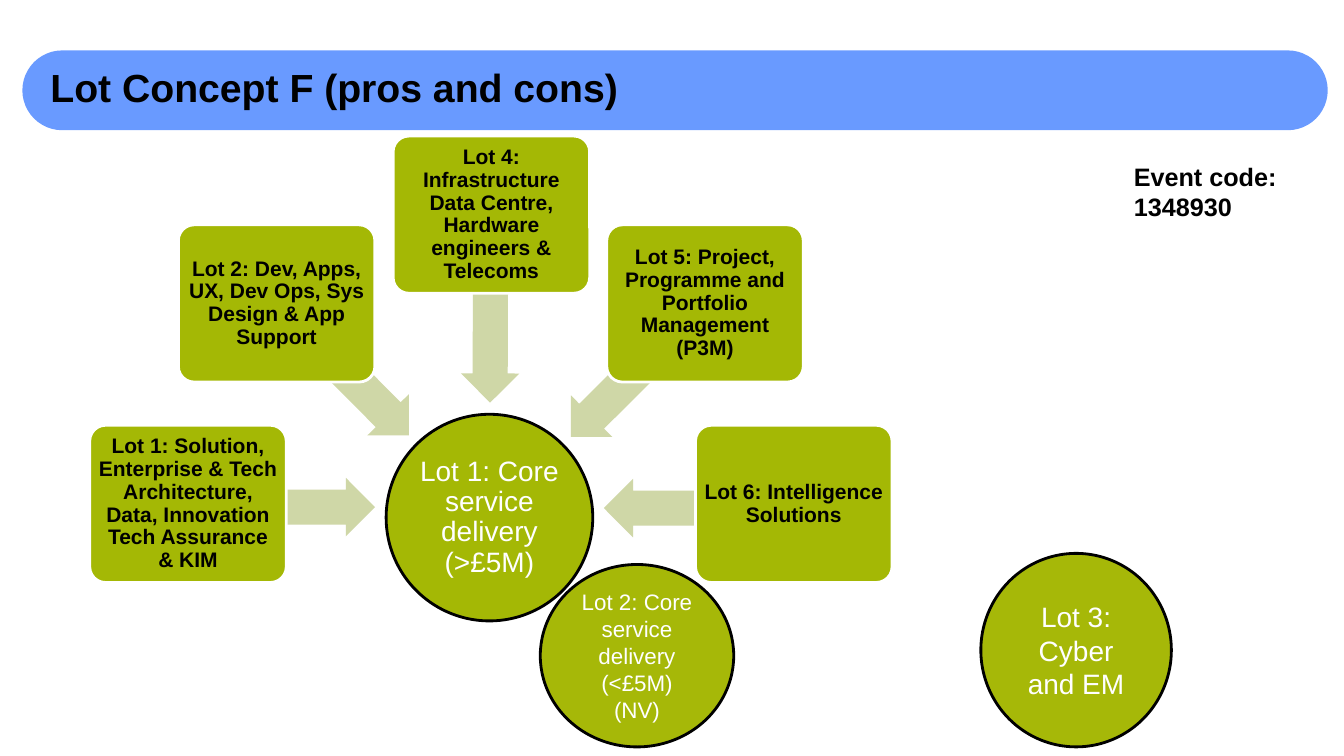
from pptx import Presentation
from pptx.dml.color import RGBColor
from pptx.enum.shapes import MSO_SHAPE as SHAPE
from pptx.enum.text import MSO_ANCHOR as ANCHOR, MSO_AUTO_SIZE as AUTO, PP_ALIGN as ALIGN
from pptx.util import Pt

BLUE = RGBColor(0x69, 0x9A, 0xFF)
GREEN = RGBColor(0xA4, 0xB8, 0x05)
DISC_GREEN = RGBColor(0xA6, 0xB8, 0x08)
PALE_GREEN = RGBColor(0xCF, 0xD7, 0xA7)
BLACK = RGBColor(0, 0, 0)
WHITE = RGBColor(0xFF, 0xFF, 0xFF)


def add_shape(kind, x, y, w, h, fill, line=None):
    sp = s.shapes.add_shape(kind, Pt(x), Pt(y), Pt(w), Pt(h))
    sp.shadow.inherit = False
    sp.fill.solid()
    sp.fill.fore_color.rgb = fill
    if line is None:
        sp.line.fill.background()
    else:
        sp.line.color.rgb = line
        sp.line.width = Pt(2)
    return sp


def write(sp, text, size, color, bold=False, align=ALIGN.CENTER,
          anchor=ANCHOR.MIDDLE, inset=(7.2, 3.6), spacing=None):
    """Fill a shape with text; inset is (horizontal, vertical) in points."""
    tf = sp.text_frame
    tf.text = text
    tf.word_wrap = True
    tf.auto_size = AUTO.NONE
    tf.vertical_anchor = anchor
    tf.margin_left = tf.margin_right = Pt(inset[0])
    tf.margin_top = tf.margin_bottom = Pt(inset[1])
    for p in tf.paragraphs:
        p.alignment = align
        p.line_spacing = spacing
        p.font.name = "Arial"
        p.font.size = Pt(size)
        p.font.bold = bold
        p.font.color.rgb = color


prs = Presentation()
prs.slide_width, prs.slide_height = Pt(960), Pt(540)
s = prs.slides.add_slide(prs.slide_layouts[5])

# Title on its blue bar
title = s.shapes.title
title.left, title.top, title.width, title.height = Pt(36), Pt(45.4), Pt(754.6), Pt(41.8)
write(title, "Lot Concept F (pros and cons)", 28, BLACK, True,
      ALIGN.LEFT, ANCHOR.TOP, (0, 0))
bar = add_shape(SHAPE.ROUNDED_RECTANGLE, 16, 36, 932.4, 57, BLUE)
bar.adjustments[0] = 0.5
title._element.addprevious(bar._element)

# Core delivery circles
small_core = add_shape(SHAPE.OVAL, 385.9, 403.2, 138.2, 130.3, DISC_GREEN, BLACK)
write(small_core, "Lot 2: Core service delivery (<£5M)\n(NV)", 16, WHITE)
core = add_shape(SHAPE.OVAL, 275.8, 295.9, 147.6, 147.6, GREEN, BLACK)
write(core, "Lot 1: Core service delivery (>£5M)", 20, WHITE, inset=(0.7, 0.7), spacing=0.9)

# Lots feeding the core: text, box corner, arrow corner, arrow length, arrow rotation
lots = [
    ("Lot 1: Solution, Enterprise & Tech Architecture, Data, Innovation Tech Assurance & KIM",
     (64.1, 303.8), (133.9, 341.3), 134, 180),
    ("Lot 2: Dev, Apps, UX, Dev Ops, Sys Design & App Support",
     (127.4, 160.6), (177.8, 242.6), 134, 225.2),
    ("Lot 4: Infrastructure Data Centre, Hardware engineers & Telecoms",
     (280.8, 97.2), (283, 199.4), 134.6, 270.2),
    ("Lot 5: Project, Programme and Portfolio Management (P3M)",
     (433.4, 160.6), (388.1, 243.4), 135.4, 315.2),
    ("Lot 6: Intelligence Solutions",
     (496.8, 303.8), (431.3, 342), 136.1, 0),
]
for text, box_at, arrow_at, length, rotation in lots:
    arrow = add_shape(SHAPE.LEFT_ARROW, *arrow_at, length, 41.8, PALE_GREEN)
    arrow.adjustments[0] = 0.6
    arrow.rotation = rotation
    box = add_shape(SHAPE.ROUNDED_RECTANGLE, *box_at, 140.4, 112.3, GREEN, WHITE)
    box.adjustments[0] = 0.1
    write(box, text, 15, BLACK, True, inset=(2.6, 2.1), spacing=0.9)

# Stand-alone lot and poll code
cyber = add_shape(SHAPE.OVAL, 700.6, 395.3, 136.1, 138.2, DISC_GREEN, BLACK)
write(cyber, "Lot 3: Cyber and EM", 20, WHITE)
code = s.shapes.add_textbox(Pt(802.8), Pt(108), Pt(144), Pt(45.4))
write(code, "Event code: 1348930", 18, BLACK, True, ALIGN.LEFT, ANCHOR.TOP, (7.2, 7.2))

prs.save("out.pptx")
